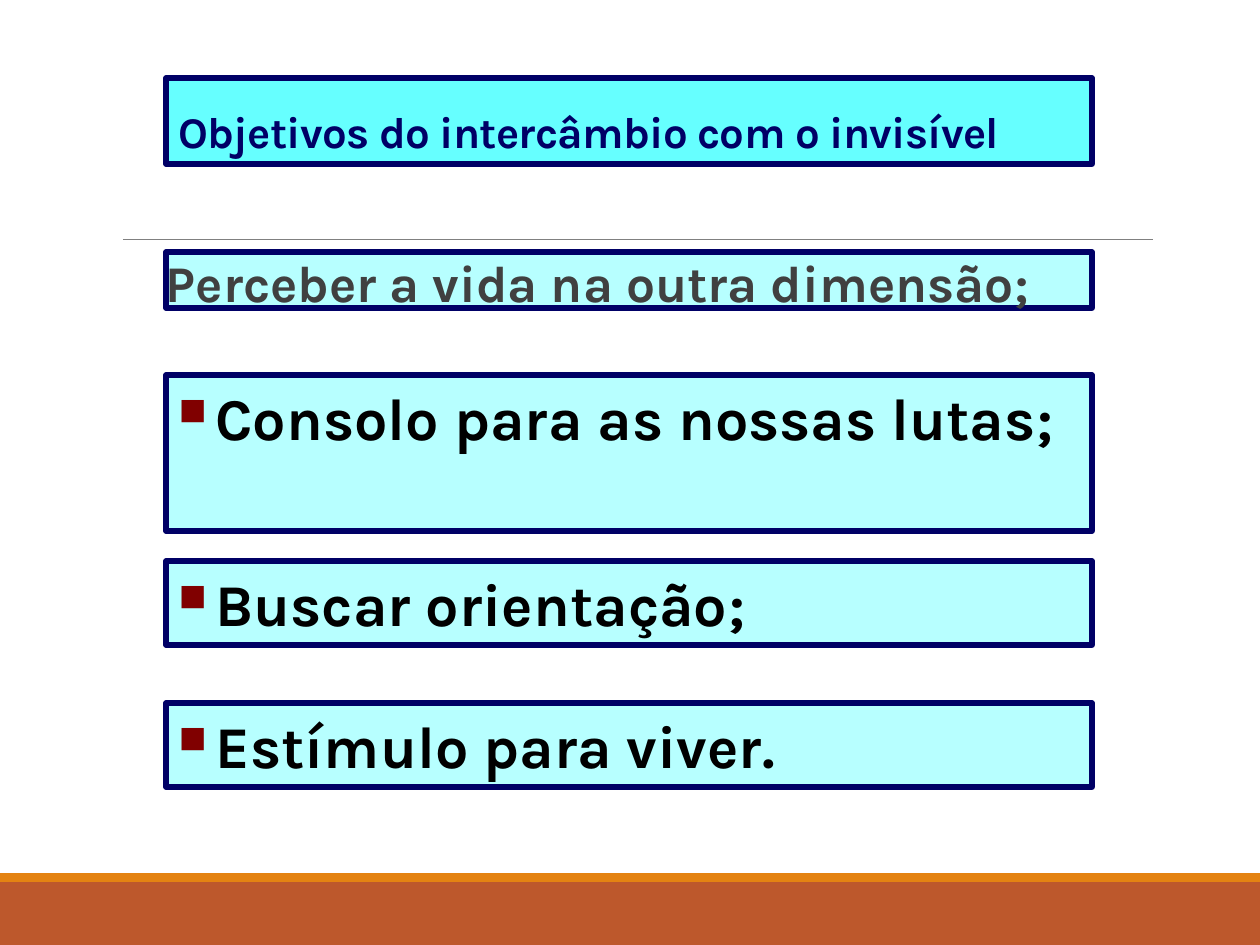
from lxml.etree import SubElement
from pptx import Presentation
from pptx.dml.color import RGBColor
from pptx.enum.shapes import MSO_CONNECTOR, MSO_SHAPE
from pptx.enum.text import MSO_ANCHOR, MSO_AUTO_SIZE, PP_ALIGN
from pptx.oxml.ns import qn
from pptx.util import Emu, Pt

FONT = "Karla"
NAVY = RGBColor(0x00, 0x00, 0x66)
CYAN = RGBColor(0x66, 0xFF, 0xFF)
PALE_CYAN = RGBColor(0xB7, 0xFF, 0xFF)
DARK_GRAY = RGBColor(0x40, 0x40, 0x40)
RULE_GRAY = RGBColor(0x80, 0x80, 0x80)
BLACK = RGBColor(0x00, 0x00, 0x00)
MAROON = RGBColor(0x80, 0x00, 0x00)
RUST = RGBColor(0xBD, 0x58, 0x2C)
ORANGE = RGBColor(0xE4, 0x83, 0x12)

# Content: text, top and height in px
HEADING = ("Objetivos do intercâmbio com o invisível", 78, 86)
FIRST_GOAL = ("Perceber a vida na outra dimensão;", 252, 56)
OTHER_GOALS = [
    ("Consolo para as nossas lutas;", 375, 156),
    ("Buscar orientação;", 561, 84),
    ("Estímulo para viver.", 703, 84),
]
FOOTER_BANDS = [(RUST, 882, 63), (ORANGE, 873, 9)]

SLIDE_W, SLIDE_H = 1260, 945
BOX_LEFT, BOX_W = 166, 926
RULE_LEFT, RULE_RIGHT, RULE_Y = 123, 1153, 239
BULLET_INDENT = 37


def px(length):
    return Emu(round(length * 914400 / 126))


def fill_box(box, content, fill, size, color, align=PP_ALIGN.LEFT):
    """Place and frame a box, write its one paragraph and return that."""
    text, top, height = content
    box.left, box.top, box.width, box.height = map(px, (BOX_LEFT, top, BOX_W, height))
    box.fill.solid()
    box.fill.fore_color.rgb = fill
    box.line.color.rgb = NAVY
    box.line.width = Pt(3)
    frame = box.text_frame
    frame.word_wrap = True
    frame.auto_size = MSO_AUTO_SIZE.NONE
    frame.vertical_anchor = MSO_ANCHOR.TOP
    frame.text = text
    paragraph = frame.paragraphs[0]
    paragraph.alignment = align
    paragraph.space_before = Pt(0)
    font = paragraph.font
    font.name, font.size, font.bold = FONT, Pt(size), True
    font.color.rgb = color
    return paragraph


def indent_properties(paragraph, indent):
    properties = paragraph._p.get_or_add_pPr()
    properties.set("marL", str(px(indent)))
    properties.set("indent", str(-px(indent)))
    return properties


def add_square_bullet(paragraph):
    properties = indent_properties(paragraph, BULLET_INDENT)
    run_defaults = properties.find(qn("a:defRPr"))
    color = SubElement(properties, qn("a:buClr"))
    SubElement(color, qn("a:srgbClr"), val=str(MAROON))
    size = SubElement(properties, qn("a:buSzPct"), val="65000")
    mark = SubElement(properties, qn("a:buChar"), char="■")
    for part in (color, size, mark):
        run_defaults.addprevious(part)


presentation = Presentation()
presentation.slide_width, presentation.slide_height = px(SLIDE_W), px(SLIDE_H)
slide = presentation.slides.add_slide(presentation.slide_layouts[1])
shapes = slide.shapes

# Footer bands
for color, top, height in FOOTER_BANDS:
    band = shapes.add_shape(MSO_SHAPE.RECTANGLE, 0, px(top), px(SLIDE_W), px(height))
    band.shadow.inherit = False
    band.fill.solid()
    band.fill.fore_color.rgb = color
    band.line.fill.background()

# Rule under the heading
rule = shapes.add_connector(MSO_CONNECTOR.STRAIGHT, px(RULE_LEFT), px(RULE_Y),
                            px(RULE_RIGHT), px(RULE_Y))
rule.line.color.rgb = RULE_GRAY
rule.line.width = Pt(0.5)
SubElement(rule._element.spPr, qn("a:effectLst"))

# Heading
heading = fill_box(shapes.title, HEADING, CYAN, 25, NAVY)
heading.line_spacing = 0.85
heading.runs[0].font._element.set("spc", "-40")
shapes.title.text_frame.vertical_anchor = MSO_ANCHOR.BOTTOM

# First goal, without a bullet
first_box = slide.placeholders[1]
first_goal = fill_box(first_box, FIRST_GOAL, PALE_CYAN, 29.4, DARK_GRAY, PP_ALIGN.JUSTIFY)
first_box.text_frame.margin_left = first_box.text_frame.margin_right = 0
first_goal.line_spacing = 0.9
first_goal.space_after = Pt(1.5)
first_properties = indent_properties(first_goal, 0)
no_bullet = SubElement(first_properties, qn("a:buNone"))
first_properties.find(qn("a:defRPr")).addprevious(no_bullet)

# Remaining goals, with square bullets
for goal in OTHER_GOALS:
    goal_box = shapes.add_shape(MSO_SHAPE.RECTANGLE, 0, 0, px(BOX_W), px(BOX_W))
    goal_box.shadow.inherit = False
    add_square_bullet(fill_box(goal_box, goal, PALE_CYAN, 33.8, BLACK))

presentation.save("out.pptx")
